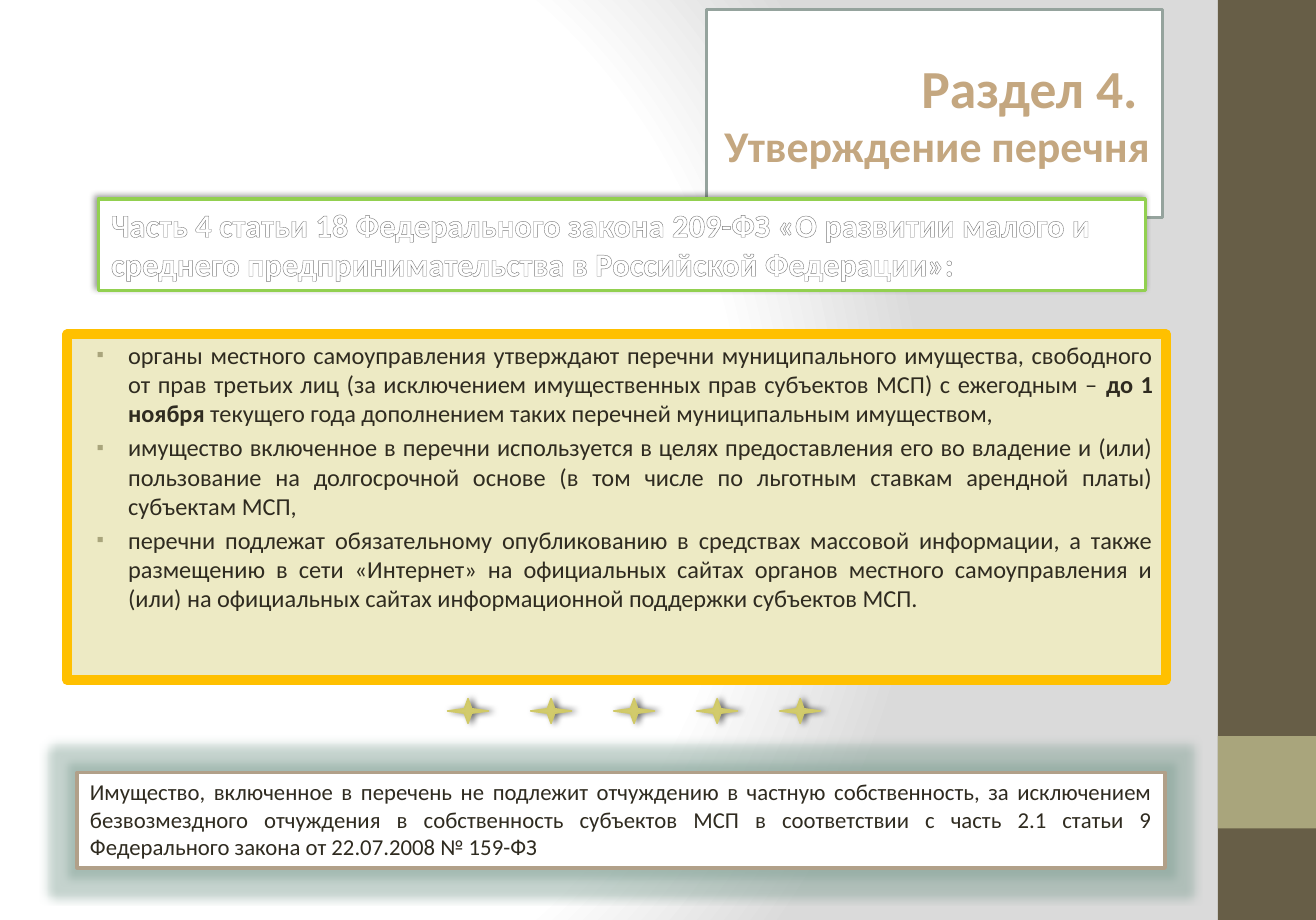
"""Build the slide on approving the list of municipal property."""
from dataclasses import dataclass

import lxml.etree
import pptx
import pptx.dml.color
import pptx.enum.shapes
import pptx.enum.text
import pptx.oxml
import pptx.oxml.ns
import pptx.util

WIDTH, HEIGHT = pptx.util.Cm(28.6), pptx.util.Cm(20)
FONT = "Calibri"
INK = "2F2B20"
SHAPES = pptx.enum.shapes.MSO_SHAPE
ALIGN = pptx.enum.text.PP_ALIGN
ANCHOR = pptx.enum.text.MSO_ANCHOR
NAMESPACE = 'xmlns:a="http://schemas.openxmlformats.org/drawingml/2006/main"'


@dataclass(frozen=True)
class Effect:
    """A shadow, or a glow when the distance is None; sizes in points."""
    color: str
    alpha: int
    blur: float
    distance: float | None = None
    angle: int = 0


@dataclass(frozen=True)
class Panel:
    """A filled shape; its place is in percent of the slide's width and height."""
    left: float
    top: float
    width: float
    height: float
    fill: str
    line: str | None = None
    weight: float = 2
    effect: Effect | None = None
    kind: pptx.enum.shapes.MSO_SHAPE = SHAPES.RECTANGLE


@dataclass(frozen=True)
class Span:
    """A piece of text with one weight."""
    text: str
    bold: bool = False


STAR_SHADOW = Effect("000000", 60, 4, 2)
SIDEBAR = Panel(92.54, 0, 7.46, 100, "675E47")
SIDEBAR_ACCENT = Panel(92.54, 80.01, 7.46, 10.03, "A9A57C")
BODY = Panel(5.12, 36.34, 83.48, 37.59, "EDEAC4", "FFC000", 6)
TITLE = Panel(53.7, 1.02, 34.64, 22.6, "FFFFFF", "95A39D")
HEADING = Panel(7.46, 21.64, 79.57, 9.91, "FFFFFF", "92D050",
                effect=Effect("000000", 40, 4, 3, 225))
NOTE = Panel(5.86, 83.95, 82.68, 10.41, "FFFFFF", "B1A089",
             effect=Effect("7F9F93", 45, 11))
STARS = [Panel(34.01 + 6.31 * column, 75.95, 3.11, 2.67, "D2CB6C", "D0C967", 1,
               STAR_SHADOW, SHAPES.STAR_4_POINT) for column in range(5)]

RULES = [
    [Span("органы местного самоуправления утверждают перечни муниципального имущества, "
          "свободного от прав третьих лиц (за исключением имущественных прав субъектов МСП) "
          "с ежегодным – "),
     Span("до 1 ноября ", True),
     Span("текущего года дополнением таких перечней муниципальным имуществом,")],
    [Span("имущество включенное в перечни используется в целях предоставления его во владение "
          "и (или) пользование на долгосрочной основе (в том числе по льготным ставкам "
          "арендной платы) субъектам МСП,")],
    [Span("перечни подлежат обязательному опубликованию в средствах массовой информации, "
          "а также размещению в сети «Интернет» на официальных сайтах органов местного "
          "самоуправления и (или) на официальных сайтах информационной поддержки субъектов МСП.")],
]
HEADING_TEXT = ("Часть 4 статьи 18 Федерального закона 209-ФЗ «О развитии малого и среднего "
                "предпринимательства в Российской Федерации»:")
NOTE_TEXT = ("Имущество, включенное в перечень не подлежит отчуждению в частную собственность, "
             "за исключением безвозмездного отчуждения в собственность субъектов МСП "
             "в соответствии с часть 2.1 статьи 9 Федерального закона от 22.07.2008 № 159-ФЗ")


def rgb(color: str) -> pptx.dml.color.RGBColor:
    """Turn a hex string into a colour."""
    return pptx.dml.color.RGBColor.from_string(color)


def xml(markup: str) -> lxml.etree.ElementBase:
    """Parse DrawingML whose root tag carries no namespace yet."""
    root, rest = markup.split(" ", 1)
    return pptx.oxml.parse_xml(f"{root} {NAMESPACE} {rest}")


def add_effect(shape, effect: Effect) -> None:
    """Put a shadow or a glow on a shape."""
    blur = pptx.util.Pt(effect.blur)
    color = (f'<a:srgbClr val="{effect.color}"><a:alpha val="{effect.alpha * 1000}"/>'
             '</a:srgbClr>')
    if effect.distance is None:
        markup = f'<a:glow rad="{blur}">{color}</a:glow>'
    else:
        markup = (f'<a:outerShdw blurRad="{blur}" dist="{pptx.util.Pt(effect.distance)}" '
                  f'dir="{effect.angle * 60000}" rotWithShape="0">{color}</a:outerShdw>')
    shape._element.spPr.find(pptx.oxml.ns.qn("a:effectLst")).append(xml(markup))


def add_panel(page, panel: Panel):
    """Draw one panel and return its shape."""
    shape = page.shapes.add_shape(
        panel.kind, round(panel.left * WIDTH / 100), round(panel.top * HEIGHT / 100),
        round(panel.width * WIDTH / 100), round(panel.height * HEIGHT / 100))
    shape.shadow.inherit = False
    shape.fill.solid()
    shape.fill.fore_color.rgb = rgb(panel.fill)
    if panel.line:
        shape.line.color.rgb = rgb(panel.line)
        shape.line.width = pptx.util.Pt(panel.weight)
    else:
        shape.line.fill.background()
    if panel.effect:
        add_effect(shape, panel.effect)
    return shape


def add_text(box, spans: list[Span], *, size: float, color: str = INK,
             align: pptx.enum.text.PP_ALIGN = ALIGN.LEFT,
             anchor: pptx.enum.text.MSO_ANCHOR = ANCHOR.TOP, wrap: bool = True,
             bullet: str | None = None, outline: str | None = None) -> None:
    """Add one paragraph to a box, using its empty first paragraph if there is one."""
    frame = box.text_frame
    frame.word_wrap = wrap
    frame.vertical_anchor = anchor
    frame.margin_left = frame.margin_right = pptx.util.Inches(0.11)
    frame.margin_top = frame.margin_bottom = pptx.util.Inches(0.05)
    para = frame.add_paragraph() if frame.text else frame.paragraphs[0]
    para.alignment = align
    if bullet:
        para.space_before = pptx.util.Pt(size * 0.2)
        properties = para._p.get_or_add_pPr()
        properties.set("marL", str(pptx.util.Inches(0.41)))
        properties.set("indent", str(pptx.util.Inches(-0.27)))
        for markup in (f'<a:buClr ><a:srgbClr val="{bullet}"/></a:buClr>',
                       '<a:buSzPct val="85000"/>', '<a:buFont typeface="Arial"/>',
                       '<a:buChar char="▪"/>'):
            properties.append(xml(markup))
    for span in spans:
        run = para.add_run()
        run.text = span.text
        run.font.name = FONT
        run.font.size = pptx.util.Pt(size)
        run.font.bold = span.bold
        run.font.color.rgb = rgb(color)
        if outline:
            run._r.get_or_add_rPr().insert(0, xml(
                f'<a:ln w="{pptx.util.Pt(0.83)}"><a:solidFill><a:srgbClr val="{outline}"/>'
                '</a:solidFill></a:ln>'))


def paint_background(page) -> None:
    """Fill the page with a round gradient from white to grey."""
    page.background.fill.solid()
    solid = page._element.xpath("p:cSld/p:bg/p:bgPr/a:solidFill")[0]
    stops = "".join(f'<a:gs pos="{share * 1000}"><a:srgbClr val="{color}"/></a:gs>'
                    for share, color in [(0, "FFFFFF"), (75, "FFFFFF"), (100, "DADADA")])
    solid.getparent().replace(solid, xml(
        f'<a:gradFill rotWithShape="1"><a:gsLst>{stops}</a:gsLst><a:path path="circle">'
        '<a:fillToRect l="20000" t="50000" r="100000" b="50000"/></a:path></a:gradFill>'))


def main() -> None:
    """Build and save the deck."""
    deck = pptx.Presentation()
    deck.slide_width = WIDTH
    deck.slide_height = HEIGHT
    page = deck.slides.add_slide(deck.slide_layouts[6])
    paint_background(page)
    for panel in (SIDEBAR, SIDEBAR_ACCENT):
        add_panel(page, panel)
    body = add_panel(page, BODY)
    for rule in RULES:
        add_text(body, rule, size=15, align=ALIGN.JUSTIFY, bullet="A9A57C")
    title = add_panel(page, TITLE)
    for text, size in (("Раздел 4. ", 33), ("Утверждение перечня", 27)):
        add_text(title, [Span(text, True)], size=size, color="C4A780", align=ALIGN.RIGHT,
                 anchor=ANCHOR.MIDDLE, wrap=False)
    add_text(add_panel(page, HEADING), [Span(HEADING_TEXT, True)], size=20, color="FFFFFF",
             outline="7D7D7D")
    add_text(add_panel(page, NOTE), [Span(NOTE_TEXT)], size=14, align=ALIGN.JUSTIFY)
    for star in STARS:
        add_panel(page, star)
    deck.save("out.pptx")


if __name__ == "__main__":
    main()
